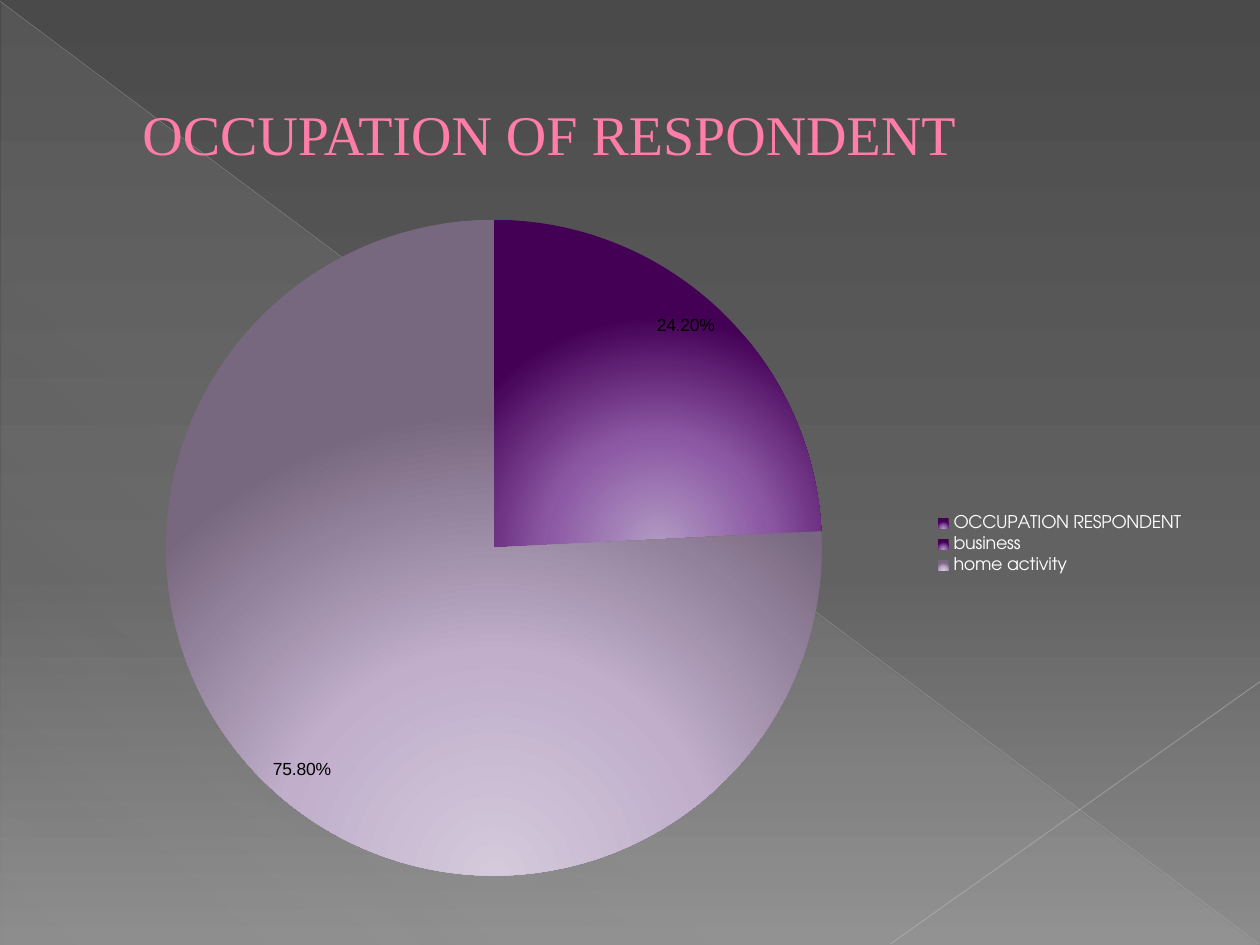
from lxml.etree import SubElement
from pptx import Presentation
from pptx.chart.data import CategoryChartData
from pptx.dml.color import RGBColor
from pptx.enum.chart import XL_CHART_TYPE, XL_LABEL_POSITION, XL_LEGEND_POSITION
from pptx.enum.shapes import MSO_CONNECTOR, MSO_SHAPE
from pptx.enum.text import MSO_ANCHOR, PP_ALIGN
from pptx.oxml import parse_xml
from pptx.oxml.ns import nsdecls, qn
from pptx.util import Inches, Pt

COLORS = {
    "top": "4A4A4A", "mid": "626262", "low": "8C8C8C",
    "veil": "D2D2D2", "long": "BFBFBF", "short": "C6C6C6",
    "title": "FF7DA7", "edge": "B12761", "text": "FFFFFF", "label": "000000",
    "plum": "440055", "violet": "8C58A4", "lilac": "B29CC4",
    "slate": "78687F", "mauve": "C0AECB", "pale": "D4CADB",
}


def rgb(name):
    return RGBColor.from_string(COLORS[name])


def gradient(stops, angle=None):
    marks = "".join(
        f'<a:gs pos="{pos * 1000}"><a:srgbClr val="{COLORS[name]}">'
        f'<a:alpha val="{alpha * 1000}"/></a:srgbClr></a:gs>'
        for pos, name, alpha in stops)
    if angle is None:
        shade = ('<a:path path="circle"><a:fillToRect l="50000" t="100000" '
                 'r="50000" b="0"/></a:path>')
    else:
        shade = f'<a:lin ang="{angle * 60000}" scaled="0"/>'
    return parse_xml(f'<a:gradFill {nsdecls("a")} rotWithShape="1">'
                     f'<a:gsLst>{marks}</a:gsLst>{shade}</a:gradFill>')


def refill(fill, parent, grad):
    fill.solid()
    parent.replace(parent.find(qn("a:solidFill")), grad)


class Deck:
    def __init__(self):
        self.prs = Presentation()
        self.prs.slide_width, self.prs.slide_height = Inches(10), Inches(7.5)
        self.slide = self.prs.slides.add_slide(self.prs.slide_layouts[5])
        self.shapes = self.slide.shapes

    def backdrop(self, stops, angle):
        fill = self.slide.background.fill
        fill.solid()
        props = self.slide.element.find(".//" + qn("p:bgPr"))
        refill(fill, props, gradient(stops, angle))

    def veil(self, box, stops, angle):
        shape = self.shapes.add_shape(MSO_SHAPE.RIGHT_TRIANGLE, *map(Inches, box))
        shape.shadow.inherit = False
        shape.line.fill.background()
        refill(shape.fill, shape.element.spPr, gradient(stops, angle))

    def line(self, ends, color, width, alpha):
        line = self.shapes.add_connector(MSO_CONNECTOR.STRAIGHT, *map(Inches, ends))
        line.line.color.rgb = rgb(color)
        line.line.width = Pt(width)
        props = line.element.spPr
        tint = props.find(".//" + qn("a:srgbClr"))
        SubElement(tint, qn("a:alpha")).set("val", str(alpha * 1000))
        SubElement(props, qn("a:effectLst"))

    def title(self, text, box):
        title = self.shapes.title
        title.left, title.top, title.width, title.height = map(Inches, box)
        frame = title.text_frame
        frame.text = text
        frame.vertical_anchor = MSO_ANCHOR.MIDDLE
        para = frame.paragraphs[0]
        para.alignment = PP_ALIGN.LEFT
        props = para._p.get_or_add_pPr()
        props.set("marL", str(Inches(0.53)))
        props.set("indent", "0")
        para.font.size, para.font.name = Pt(32), "Times New Roman"
        run = para.runs[0]
        run.font.color.rgb = rgb("title")
        run._r.get_or_add_rPr().insert(0, parse_xml(
            f'<a:ln {nsdecls("a")} w="{Pt(0.5)}"><a:solidFill>'
            f'<a:srgbClr val="{COLORS["edge"]}"/></a:solidFill></a:ln>'))
        self.shapes._spTree.append(title.element)

    def pie(self, box, cats, vals, shades, area):
        data = CategoryChartData(number_format="0.00%")
        data.categories = cats
        data.add_series("Series 1", vals)
        chart = self.shapes.add_chart(
            XL_CHART_TYPE.PIE, *map(Inches, box), data).chart
        chart.has_title = False
        chart.font.size, chart.font.name = Pt(10), "TeX Gyre Adventor"
        chart.font.color.rgb = rgb("text")
        chart.has_legend = True
        chart.legend.position = XL_LEGEND_POSITION.RIGHT
        chart.legend.include_in_layout = False
        plot = chart.plots[0]
        plot.vary_by_categories = True
        for num, stops in enumerate(shades):
            form = plot.series[0].points[num].format
            form.line.fill.background()
            props = plot.series[0]._element.findall(qn("c:dPt"))[num].find(qn("c:spPr"))
            refill(form.fill, props, gradient(stops))
        plot.has_data_labels = True
        labels = plot.data_labels
        labels.show_value, labels.show_percentage = True, False
        labels.number_format, labels.number_format_is_linked = "0.00%", False
        labels.position = XL_LABEL_POSITION.INSIDE_END
        labels.font.size, labels.font.name = Pt(10), "Arial"
        labels.font.color.rgb = rgb("label")
        sizes = "".join(f'<c:{key} val="{val}"/>' for key, val in zip("xywh", area))
        region = chart._chartSpace.find(".//" + qn("c:plotArea"))
        for old in region.findall(qn("c:layout")):
            region.remove(old)
        region.insert(0, parse_xml(
            f'<c:layout {nsdecls("c")}><c:manualLayout><c:layoutTarget val="inner"/>'
            f'<c:xMode val="edge"/><c:yMode val="edge"/>{sizes}'
            f'</c:manualLayout></c:layout>'))


def main():
    deck = Deck()
    deck.backdrop([(0, "top", 100), (60, "mid", 100), (100, "low", 100)], 90)
    deck.veil((0.01, 0.02, 9.98, 7.48),
              [(0, "veil", 10), (70, "veil", 8), (100, "veil", 1)], 133)
    deck.line((0, 0.01, 9.99, 7.49), "long", 0.39, 35)
    deck.line((10, 5.41, 7.07, 7.49), "short", 0.47, 45)
    deck.title("OCCUPATION OF RESPONDENT", (0.5, 0.29, 9, 1.53))
    dark = [(0, "lilac", 100), (48, "violet", 100), (100, "plum", 100)]
    light = [(0, "pale", 100), (48, "mauve", 100), (100, "slate", 100)]
    deck.pie((0.5, 1.58, 9, 5.48),
             ["OCCUPATION RESPONDENT", "business", "home activity"],
             [None, 0.242, 0.758], [dark, dark, light],
             (0.09, 0.03, 0.58, 0.95))
    deck.prs.save("out.pptx")


if __name__ == "__main__":
    main()
